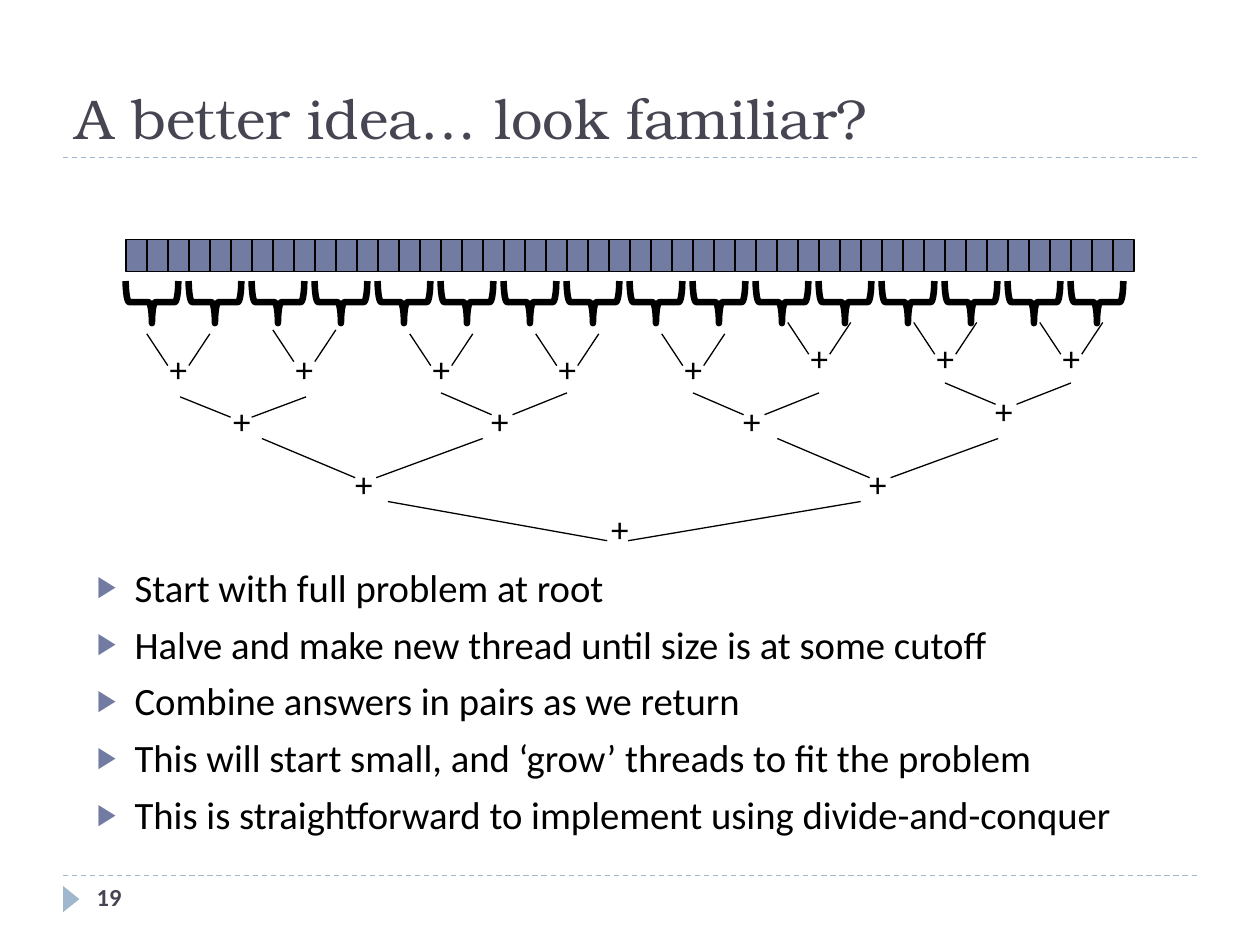
from pptx import Presentation
from pptx import util as u
from pptx.dml.color import RGBColor
from pptx.enum import dml, shapes, text
from pptx.oxml import ns
from lxml import etree

COLORS = {"ink": "000000", "title": "464653", "cell": "727CA3", "rule": "9FB8CD"}
BODY_FONT = "Calibri"
TITLE_FONT = "TeX Gyre Bonum"
CELL_COUNT = 48
BRACE_COUNT = 16
ARRAY_LEFT = 2.54
CELL_WIDTH = 20.32 / CELL_COUNT
BRACE_PITCH = 3 * CELL_WIDTH

BULLETS = [
    "Start with full problem at root",
    "Halve and make new thread until size is at some cutoff",
    "Combine answers in pairs as we return",
    "This will start small, and ‘grow’ threads to fit the problem",
    "This is straightforward to implement using divide-and-conquer",
]

# left, top of the branches, top of the plus
LEAF_SUMS = [
    (2.96, 6.73, 6.88), (5.5, 6.65, 6.88), (8.26, 6.73, 6.88), (10.8, 6.73, 6.88),
    (13.34, 6.73, 6.88), (15.88, 6.5, 6.65), (18.42, 6.5, 6.65), (20.96, 6.5, 6.65),
]

# left, right, top, bottom, joint, left of the plus, top of the plus
INNER_SUMS = [
    (3.63, 6.17, 8.0, 8.41, 4.65, 4.45, 7.92),
    (8.89, 11.43, 7.92, 8.36, 9.91, 9.65, 7.92),
    (13.97, 16.51, 7.92, 8.36, 14.99, 14.73, 7.92),
    (19.05, 21.59, 7.72, 8.15, 20.07, 19.81, 7.72),
    (5.28, 9.73, 8.84, 9.63, 7.16, 6.91, 9.19),
    (15.67, 20.12, 8.84, 9.63, 17.53, 17.27, 9.19),
    (7.82, 17.35, 10.11, 10.9, 12.24, 12.07, 10.11),
]


def rgb(name):
    """Return the named colour."""
    return RGBColor.from_string(COLORS[name])


def place(shape, left, top, width, height):
    """Move and size a shape, in centimetres."""
    shape.left, shape.top = u.Cm(left), u.Cm(top)
    shape.width, shape.height = u.Cm(width), u.Cm(height)


def add_run(paragraph, words, size, color="ink", font=BODY_FONT, bold=False):
    """Add one formatted run to a paragraph."""
    run = paragraph.add_run()
    run.text = words
    run.font.name, run.font.size, run.font.bold = font, u.Pt(size), bold
    run.font.color.rgb = rgb(color)


def add_figure(slide, kind, box, fill=None, line=None, rotation=0):
    """Add a preset shape with an optional fill and outline width."""
    shape = slide.shapes.add_shape(kind, *(u.Cm(length) for length in box))
    shape.shadow.inherit = False
    shape.rotation = rotation
    if fill:
        shape.fill.solid()
        shape.fill.fore_color.rgb = rgb(fill)
    else:
        shape.fill.background()
    if line:
        shape.line.color.rgb = rgb("ink")
        shape.line.width = u.Pt(line)
    else:
        shape.line.fill.background()


def add_line(slide, start, end, color="ink", dashed=False):
    """Add a thin straight line between two points."""
    points = (u.Cm(length) for length in (*start, *end))
    line = slide.shapes.add_connector(shapes.MSO_CONNECTOR.STRAIGHT, *points)
    line.line.color.rgb = rgb(color)
    line.line.width = u.Pt(0.75)
    if dashed:
        line.line.dash_style = dml.MSO_LINE.DASH
    etree.SubElement(line._element.spPr, ns.qn("a:effectLst"))


def add_label(slide, words, box, size, color="ink", bold=False, wrap=False):
    """Add a one-line text box."""
    label = slide.shapes.add_textbox(*(u.Cm(length) for length in box))
    label.text_frame.word_wrap = wrap
    add_run(label.text_frame.paragraphs[0], words, size, color, bold=bold)


def add_sum(slide, left, right, top, bottom, joint, plus_left, plus_top):
    """Add two branches that meet at a plus sign."""
    add_line(slide, (left, top), (joint, bottom))
    add_line(slide, (right, top), (joint + CELL_WIDTH, bottom))
    add_label(slide, "+", (plus_left, plus_top, 0.91, 1.12), 20)


def add_bullet(paragraph):
    """Give a paragraph a hanging triangle bullet."""
    properties = paragraph._p.get_or_add_pPr()
    properties.set("marL", str(u.Cm(0.76)))
    properties.set("indent", str(u.Cm(-0.76)))
    color = etree.SubElement(properties, ns.qn("a:buClr"))
    etree.SubElement(color, ns.qn("a:srgbClr"), val=COLORS["cell"])
    etree.SubElement(properties, ns.qn("a:buSzPct"), val="76000")
    etree.SubElement(properties, ns.qn("a:buChar"), char="▶")


def fill_title(title):
    """Format and fill the title placeholder."""
    place(title, 1.27, 0.43, 22.86, 2.74)
    frame = title.text_frame
    frame.vertical_anchor = text.MSO_ANCHOR.BOTTOM
    frame.auto_size = text.MSO_AUTO_SIZE.NONE
    paragraph = frame.paragraphs[0]
    paragraph.alignment = text.PP_ALIGN.LEFT
    add_run(paragraph, "A better idea… look familiar?", 32, "title", TITLE_FONT)


def fill_body(body):
    """Format and fill the list placeholder."""
    place(body, 1.7, 11.23, 21.59, 6.55)
    frame = body.text_frame
    frame.auto_size = text.MSO_AUTO_SIZE.NONE
    for index, words in enumerate(BULLETS):
        paragraph = frame.add_paragraph() if index else frame.paragraphs[0]
        paragraph.space_before = u.Pt(6)
        add_bullet(paragraph)
        add_run(paragraph, words, 22.1)


def add_frame(slide):
    """Add the dashed rules, the corner triangle and the page number."""
    for top in (17.65, 3.18):
        add_line(slide, (1.27, top), (24.13, top), "rule", dashed=True)
    add_figure(slide, shapes.MSO_SHAPE.ISOSCELES_TRIANGLE,
               (1.17, 17.96, 0.53, 0.33), fill="rule", rotation=90)
    add_label(slide, "19", (1.7, 17.65, 5.51, 1.02), 14, "title", bold=True, wrap=True)


def add_array(slide):
    """Add the row of cells and the braces that group them."""
    for index in range(CELL_COUNT):
        left = ARRAY_LEFT + index * CELL_WIDTH
        add_figure(slide, shapes.MSO_SHAPE.RECTANGLE,
                   (left, 4.83, CELL_WIDTH, 0.64), fill="cell", line=0.75)
    for index in range(BRACE_COUNT):
        left = 2.64 + index * BRACE_PITCH
        add_figure(slide, shapes.MSO_SHAPE.LEFT_BRACE,
                   (left, 5.56, 0.85, 1.06), line=3.75, rotation=270)


def add_tree(slide):
    """Add every pairwise sum from the leaves to the root."""
    for left, top, plus_top in LEAF_SUMS:
        add_sum(slide, left, left + BRACE_PITCH, top, top + 0.64,
                left + CELL_WIDTH, left + CELL_WIDTH / 2, plus_top)
    for inner_sum in INNER_SUMS:
        add_sum(slide, *inner_sum)


def main():
    """Build and save the slide."""
    presentation = Presentation()
    presentation.slide_width, presentation.slide_height = u.Cm(25.4), u.Cm(19.05)
    slide = presentation.slides.add_slide(presentation.slide_layouts[1])
    fill_title(slide.shapes.title)
    fill_body(slide.placeholders[1])
    add_frame(slide)
    add_array(slide)
    add_tree(slide)
    presentation.save("out.pptx")


if __name__ == "__main__":
    main()
